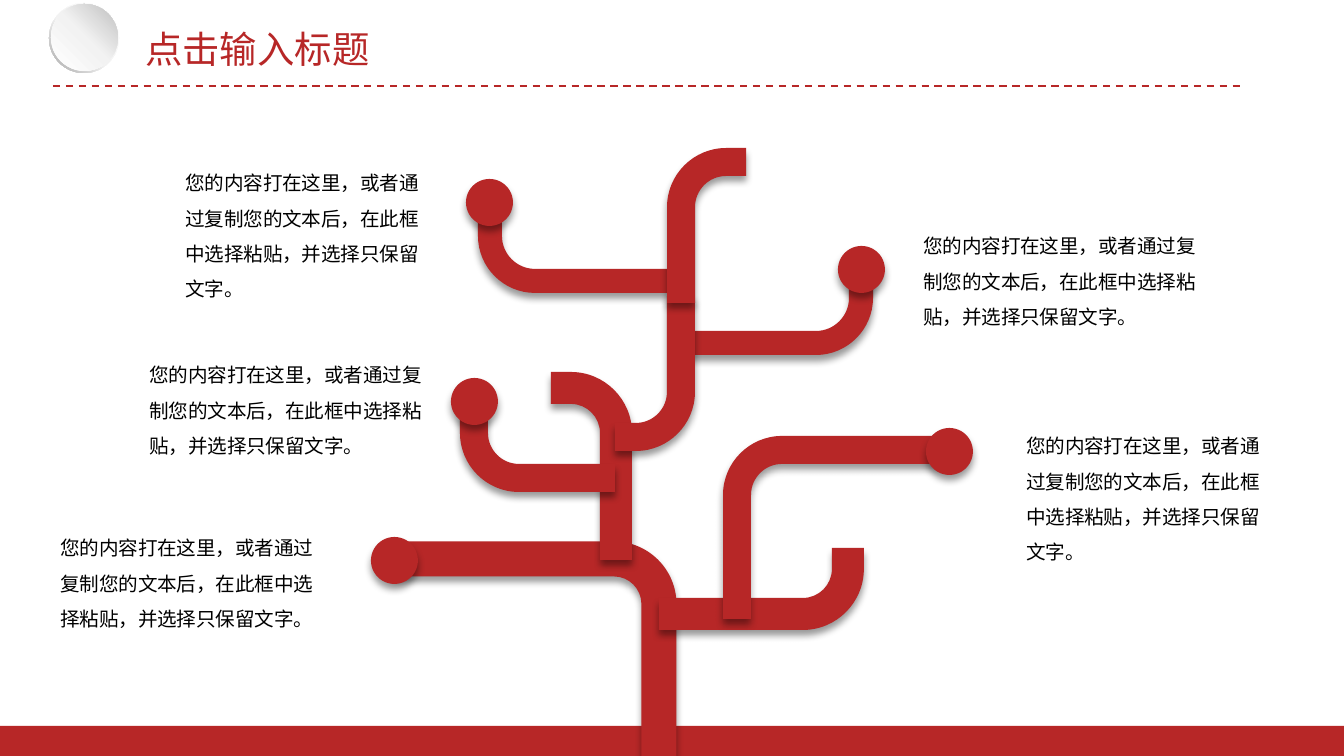
import math
from lxml import etree
from pptx import Presentation
from pptx.dml.color import RGBColor
from pptx.enum.dml import MSO_LINE
from pptx.enum.shapes import MSO_CONNECTOR, MSO_SHAPE
from pptx.enum.text import MSO_ANCHOR, MSO_AUTO_SIZE
from pptx.oxml import parse_xml
from pptx.oxml.ns import nsdecls, qn
from pptx.util import Pt

DASH = MSO_LINE.DASH
STRAIGHT = MSO_CONNECTOR.STRAIGHT
DONUT, OVAL, RECTANGLE = MSO_SHAPE.DONUT, MSO_SHAPE.OVAL, MSO_SHAPE.RECTANGLE
MIDDLE = MSO_ANCHOR.MIDDLE
GROW = MSO_AUTO_SIZE.SHAPE_TO_FIT_TEXT

PX = 914400 / 134.4
THEME = {
    "red": RGBColor(0xB7, 0x27, 0x27),
    "text": RGBColor(0, 0, 0),
    "title_font": "Roboto Condensed",
    "body_font": "Noto Sans CJK SC",
    "title_size": Pt(20),
    "body_size": Pt(10.5),
    "ring": [(0, "FFFFFF"), (55, "F2F2F2"), (100, "A6A6A6")],
    "button": [(0, "FFFFFF"), (51, "F2F2F2"), (100, "BFBFBF")],
}
CAPTION = "您的内容打在这里，或者通过复制您的文本后，在此框中选择粘贴，并选择只保留文字。"


def paint_red(shape, raised=True):
    """Fill a shape in the theme red, with a soft shadow below it if raised."""
    shape.fill.solid()
    shape.fill.fore_color.rgb = THEME["red"]
    shape.line.fill.background()
    shape.shadow.inherit = False
    if raised:
        effects = shape._element.spPr.find(qn("a:effectLst"))
        effects.append(parse_xml(
            f'<a:outerShdw {nsdecls("a")} blurRad="{Pt(4)}" dist="{Pt(3)}" '
            'dir="5400000" algn="t" rotWithShape="0"><a:srgbClr val="000000">'
            '<a:alpha val="40000"/></a:srgbClr></a:outerShdw>'))


def add_text(box, text, font_name, size, color):
    left, top, width, height = (round(v * PX) for v in box)
    frame = slide.shapes.add_textbox(left, top, width, height).text_frame
    frame.word_wrap = True
    frame.text = text
    font = frame.paragraphs[0].runs[0].font
    font.name, font.size, font.color.rgb = font_name, size, color
    east_asian = etree.SubElement(font._element, qn("a:ea"))
    east_asian.set("typeface", font_name)
    return frame


prs = Presentation()
prs.slide_width, prs.slide_height = round(1344 * PX), round(756 * PX)
slide = prs.slides.add_slide(prs.slide_layouts[6])

# Header rule and round button
rule = slide.shapes.add_connector(
    STRAIGHT, *(round(v * PX) for v in (53, 86, 1245, 86)))
rule.line.color.rgb = THEME["red"]
rule.line.width = Pt(1)
rule.line.dash_style = DASH
etree.SubElement(rule._element.spPr, qn("a:effectLst"))

for preset, left, top, size, stops, angle in [
    (DONUT, 49, 3, 70, THEME["ring"], 135),
    (OVAL, 51, 4, 67, THEME["button"], 315),
]:
    disc = slide.shapes.add_shape(
        preset, *(round(v * PX) for v in (left, top, size, size)))
    if preset == DONUT:
        disc.adjustments[0] = 0.05
    disc.line.fill.background()
    disc.shadow.inherit = False
    stop_xml = "".join(
        f'<a:gs pos="{pos * 1000}"><a:srgbClr val="{color}"/></a:gs>'
        for pos, color in stops)
    disc._element.spPr.find(qn("a:prstGeom")).addnext(parse_xml(
        f'<a:gradFill {nsdecls("a")}><a:gsLst>{stop_xml}</a:gsLst>'
        f'<a:lin ang="{angle * 60000}" scaled="0"/></a:gradFill>'))

# Ground
ground = slide.shapes.add_shape(
    RECTANGLE, *(round(v * PX) for v in (0, 726, 1344, 32)))
paint_red(ground, raised=False)

# Tree: each branch is a band along start -> rounded corner -> end
BEND_RADIUS = 45
ARC_PULL = 0.55
BENDS = (1, 5)  # the straight segments that become quarter arcs
branches = [
    ((659, 756), (659, 559), (393, 559), 35),
    ((659, 614), (848, 614), (848, 548), 32),
    ((685, 343), (861, 343), (861, 278), 24),
    ((616, 560), (616, 388), (551, 388), 32),
    ((737, 619), (737, 450), (951, 450), 28),
    ((676, 281), (490, 281), (490, 215), 24),
    ((615, 478), (474, 478), (474, 413), 28),
    ((615, 437), (681, 437), (681, 296), 28),
    ((681, 303), (681, 162), (746, 162), 28),
]
for start, corner, end, width in branches:
    run_in, run_out = math.dist(start, corner), math.dist(corner, end)
    ux, uy = ((c - s) / run_in for s, c in zip(start, corner))
    vx, vy = ((e - c) / run_out for c, e in zip(corner, end))
    edges = []
    for offset in (width / 2, -width / 2):
        radius = BEND_RADIUS + offset
        tip_x = corner[0] + offset * (ux - vx)
        tip_y = corner[1] + offset * (uy - vy)
        edges.append([
            (start[0] - offset * vx, start[1] - offset * vy),
            (tip_x - radius * ux, tip_y - radius * uy),
            (tip_x + radius * vx, tip_y + radius * vy),
            (end[0] + offset * ux, end[1] + offset * uy),
        ])
    outer, inner = edges
    outline = [(round(x * PX), round(y * PX)) for x, y in outer + inner[::-1]]
    builder = slide.shapes.build_freeform(*outline[0], scale=1.0)
    builder.add_line_segments(outline[1:], close=True)
    branch = builder.convert_to_shape()
    paint_red(branch)

    segments = list(branch._element.iter(qn("a:lnTo")))
    for bend in BENDS:
        (x1, y1), (x2, y2) = (
            (int(segment[0].get("x")), int(segment[0].get("y")))
            for segment in segments[bend - 1:bend + 1])
        leaves_sideways = (abs(ux) > 0.5) == (bend == BENDS[0])
        tip = (x2, y1) if leaves_sideways else (x1, y2)
        arc = etree.Element(qn("a:cubicBezTo"))
        for x, y, pull in ((x1, y1, ARC_PULL), (x2, y2, ARC_PULL), (x2, y2, 0)):
            point = etree.SubElement(arc, qn("a:pt"))
            point.set("x", str(round(x + pull * (tip[0] - x))))
            point.set("y", str(round(y + pull * (tip[1] - y))))
        segments[bend].getparent().replace(segments[bend], arc)

FRUIT = 47
for left, top in [(371, 537), (451, 378), (926, 428), (838, 246), (466, 179)]:
    fruit = slide.shapes.add_shape(
        OVAL, *(round(v * PX) for v in (left, top, FRUIT, FRUIT)))
    paint_red(fruit)

# Captions and title
for box in [
    (47, 518, 299, 121),
    (136, 345, 306, 121),
    (1013, 416, 278, 156),
    (910, 216, 301, 121),
    (172, 153, 278, 156),
]:
    caption = add_text(box, CAPTION, THEME["body_font"],
                       THEME["body_size"], THEME["text"])
    caption.auto_size = GROW
    caption.paragraphs[0].line_spacing = 1.5

title = add_text((132, 19, 370, 60), "点击输入标题", THEME["title_font"],
                 THEME["title_size"], THEME["red"])
title.vertical_anchor = MIDDLE

prs.save("out.pptx")
